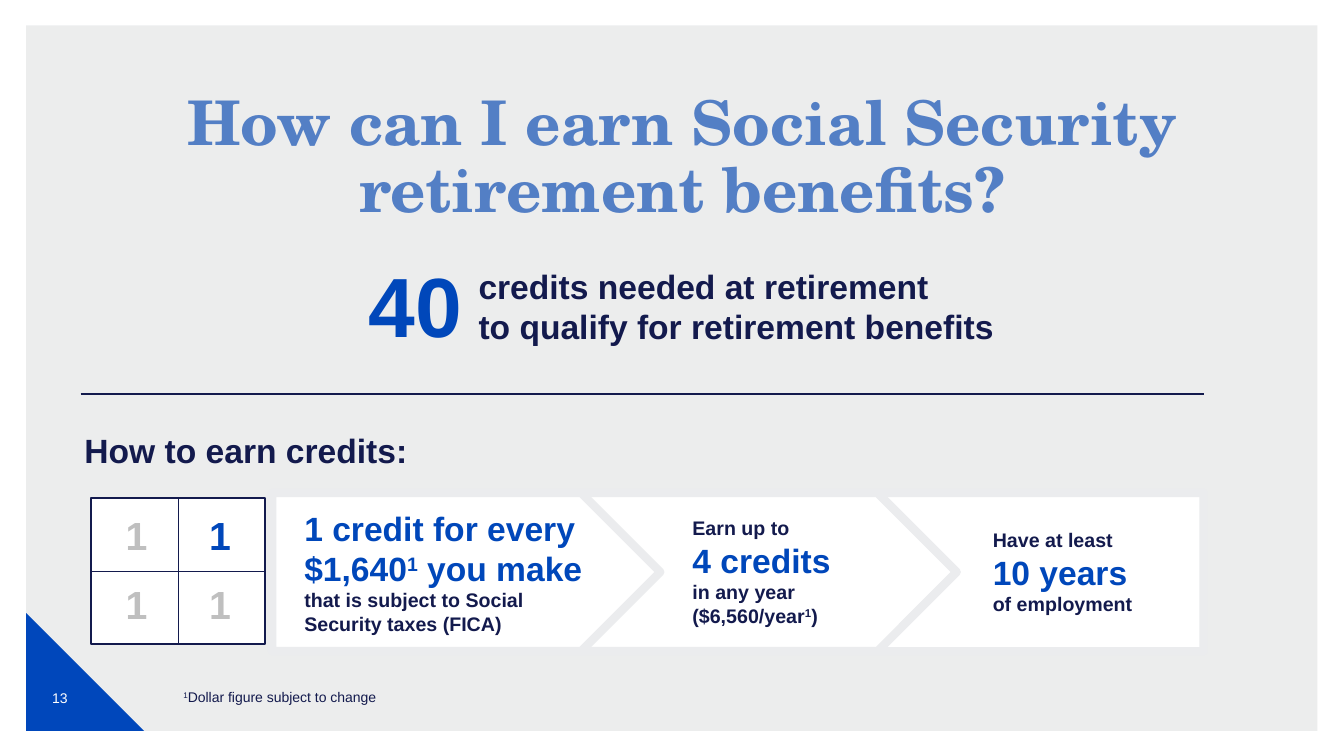
from lxml import etree
from pptx import Presentation
from pptx.dml.color import RGBColor
from pptx.enum.shapes import MSO_CONNECTOR, MSO_SHAPE
from pptx.enum.text import MSO_ANCHOR, MSO_AUTO_SIZE, PP_ALIGN
from pptx.oxml.ns import qn
from pptx.util import Cm, Pt

BLUE, NAVY, GREY = "0047BA", "131A4D", "BFBFBF"
WHITE, PANEL, EDGE = "FFFFFF", "D0D3D4", "EBECEE"


def colour(value):
    return RGBColor.from_string(value)


def add_block(page, kind, left, top, width, height, fill, line=None, weight=1):
    block = page.shapes.add_shape(kind, Cm(left), Cm(top), Cm(width), Cm(height))
    block.shadow.inherit = False
    block.fill.solid()
    block.fill.fore_color.rgb = colour(fill)
    if line:
        block.line.color.rgb = colour(line)
        block.line.width = Pt(weight)
    else:
        block.line.fill.background()
    return block


def add_rule(page, left, top, right, bottom, weight):
    rule = page.shapes.add_connector(
        MSO_CONNECTOR.STRAIGHT, Cm(left), Cm(top), Cm(right), Cm(bottom))
    rule.line.color.rgb = colour(NAVY)
    rule.line.width = Pt(weight)
    etree.SubElement(rule._element.spPr, qn("a:effectLst"))


def add_text(page, left, top, width, height, lines, bold=True):
    """Each line is a list of (text, size, colour, raised) spans."""
    box = page.shapes.add_textbox(Cm(left), Cm(top), Cm(width), Cm(height))
    frame = box.text_frame
    frame.word_wrap = True
    for index, spans in enumerate(lines):
        para = frame.add_paragraph() if index else frame.paragraphs[0]
        for text, size, tint, raised in spans:
            span = para.add_run()
            span.text = text
            span.font.name = "Arial"
            span.font.size = Pt(size)
            span.font.bold = bold
            span.font.color.rgb = colour(tint)
            if raised:
                span._r.get_or_add_rPr().set("baseline", "30000")
    return box


def plain(text, size, tint=NAVY):
    return (text, size, tint, False)


def raised(text, size, tint=NAVY):
    return (text, size, tint, True)


def add_backdrop(page, left, top, width, height):
    panel = add_block(page, MSO_SHAPE.RECTANGLE, left, top, width, height, PANEL)
    tint = panel._element.spPr.find(qn("a:solidFill"))[0]
    etree.SubElement(tint, qn("a:alpha")).set("val", "40000")
    # Corner with the page number
    side = 2.97
    corner = top + height - side
    add_block(page, MSO_SHAPE.RIGHT_TRIANGLE, left, corner, side, side, "0047BB")
    number = add_text(page, left + 0.15, corner + 1.4, 1.4, 1.47,
                      [[plain("13", 10, WHITE)]], bold=False)
    number.text_frame.vertical_anchor = MSO_ANCHOR.MIDDLE
    number.text_frame.paragraphs[0].alignment = PP_ALIGN.CENTER


def add_title(page, left, top, width, height):
    title = page.shapes.title
    title.left, title.top = Cm(left), Cm(top)
    title.width, title.height = Cm(width), Cm(height)
    frame = title.text_frame
    frame.text = "How can I earn Social Security retirement benefits?"
    frame.word_wrap = True
    frame.auto_size = MSO_AUTO_SIZE.NONE
    frame.vertical_anchor = MSO_ANCHOR.TOP
    frame.margin_left = frame.margin_right = 0
    para = frame.paragraphs[0]
    para.alignment = PP_ALIGN.CENTER
    para.line_spacing = 0.9
    font = para.runs[0].font
    font.name, font.size, font.bold = "TeX Gyre Schola", Pt(44), True
    font.color.rgb = colour("0047BB")


def add_requirement(page, left, top):
    add_text(page, left, top, 4.39, 2.82, [[plain("40", 60, BLUE)]])
    add_text(page, left + 2.77, top + 0.31, 13.84, 2.31, [
        [plain("credits needed at retirement", 24)],
        [plain("to qualify for retirement benefits", 24)]])


def add_credit_grid(page, left, top, width, height):
    add_block(page, MSO_SHAPE.RECTANGLE, left, top, width, height, WHITE, NAVY)
    middle, centre = top + height / 2, left + width / 2
    add_rule(page, left, middle, left + width, middle, 0.5)
    add_rule(page, centre, top, centre, top + height, 0.5)
    for row in range(2):
        for column in range(2):
            tint = BLUE if (row, column) == (0, 1) else GREY
            add_text(page, left + 0.63 + column * 2.1, top + 0.2 + row * 1.75,
                     1.4, 1.45, [[plain("1", 28, tint)]])


def add_stages(page, left, top, height):
    earn = [[plain("1 credit for every $1,640", 24, BLUE), raised("1", 24, BLUE),
             plain(" you make", 24, BLUE),
             plain(" that is subject to Social Security taxes (FICA)", 14)]]
    limit = [[plain("Earn up to", 14)], [plain("4 credits", 24, BLUE)],
             [plain("in any year ($6,560/year", 14), raised("1", 14), plain(")", 14)]]
    years = [[plain("Have at least", 14)], [plain("10 years", 24, BLUE)],
             [plain("of employment", 14)]]
    # Plate offset and width, then text offset, drop, width and lines
    stages = [(0, 9.78, 0.56, 0.25, 7.98, earn),
              (7.47, 9.78, 10.34, 0.46, 5.49, limit),
              (13.31, 10.16, 17.91, 0.76, 5.38, years)]
    # The last plate lies at the back, turned to end in a square edge
    for offset, width, *_ in reversed(stages):
        plate = add_block(page, MSO_SHAPE.PENTAGON, left + offset, top,
                          width, height, WHITE, EDGE, 6)
        if offset == stages[-1][0]:
            plate.rotation = 180
    for _, _, offset, drop, width, lines in stages:
        add_text(page, left + offset, top + drop, width, height - 2 * drop, lines)


def main():
    deck = Presentation()
    deck.slide_width, deck.slide_height = Cm(33.87), Cm(19.05)
    page = deck.slides.add_slide(deck.slide_layouts[5])
    add_backdrop(page, 0.66, 0.64, 32.54, 17.78)
    add_title(page, 3.99, 2.21, 26.42, 2.41)
    add_requirement(page, 9.04, 6.27)
    add_rule(page, 2.03, 9.93, 30.33, 9.93, 1)
    add_text(page, 1.88, 10.72, 14.3, 1.27, [[plain("How to earn credits:", 24)]])
    add_stages(page, 6.86, 12.42, 3.99)
    add_credit_grid(page, 2.29, 12.55, 4.39, 3.68)
    # Footnote
    add_text(page, 4.37, 17.22, 27.51, 0.69,
             [[raised("1", 10), plain("Dollar figure subject to change", 10)]],
             bold=False)
    deck.save("out.pptx")


if __name__ == "__main__":
    main()
